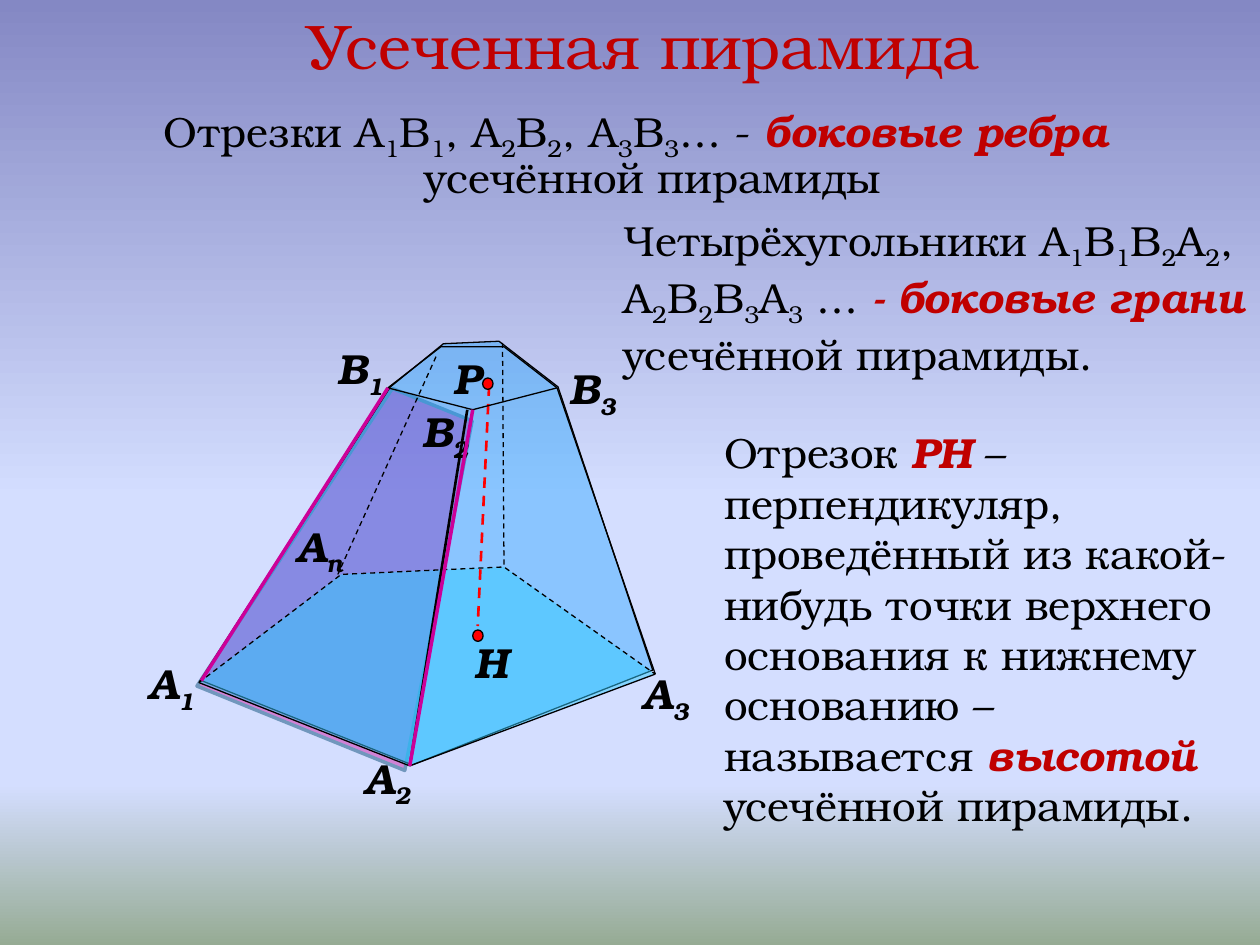
"""Build a slide on the truncated pyramid: its edges, faces and height."""
from lxml import etree
from pptx import Presentation
from pptx.dml.color import RGBColor
from pptx.enum.dml import MSO_LINE
from pptx.enum.shapes import MSO_CONNECTOR, MSO_SHAPE
from pptx.enum.text import PP_ALIGN
from pptx.oxml.ns import qn
from pptx.util import Cm, Pt

DASH = MSO_LINE.DASH
STRAIGHT = MSO_CONNECTOR.STRAIGHT
TRAPEZOID = MSO_SHAPE.TRAPEZOID
OVAL = MSO_SHAPE.OVAL
CENTER = PP_ALIGN.CENTER
FONT = "TeX Gyre Bonum"
COLORS = {
    "ink": "000000", "accent": "C00000", "edge": "CC0099", "face_line": "7197BD",
    "body": "0099FF", "base": "33CCFF", "height": "FF0000",
}
SKY = [(0, "8488C4"), (53, "D4DEFF"), (83, "D4DEFF"), (100, "96AB94")]

A1, A2, A3 = (4.01, 13.76), (8.26, 15.44), (13.21, 13.59)
A_N, A_BACK = (6.88, 11.58), (10.16, 11.43)
B1, B2, B3 = (7.82, 7.82), (9.53, 8.26), (11.23, 7.82)
B_N, B_BACK = (8.89, 6.99), (10.16, 6.99)
BODY = [(4.06, 13.72), (8.31, 15.42), (13.16, 13.51), (11.25, 7.8),
        (10.06, 6.88), (8.94, 6.93), (7.87, 7.8)]
VERTEX_LABELS = [
    ("А_1", 2.74, 13.13), ("А_2", 7.09, 15.04), ("А_n", 5.72, 10.36),
    ("А_3", 12.7, 13.34), ("В_1", 6.55, 6.78), ("В_2", 8.26, 8.05),
    ("В_3", 11.23, 7.19), ("Р", 8.89, 6.99), ("Н", 9.32, 12.7),
]


def rgb(name):
    """Return the palette colour with this name."""
    return RGBColor.from_string(COLORS[name])


def paint_sky(slide):
    """Fill the background with the vertical gradient."""
    fill = slide.background.fill
    fill.gradient()
    fill.gradient_angle = 270
    stops = slide.background._cSld.find(".//" + qn("a:gsLst"))
    for old_stop in list(stops):
        stops.remove(old_stop)
    for percent, color in SKY:
        stop = etree.SubElement(stops, qn("a:gs"), pos=str(percent * 1000))
        etree.SubElement(stop, qn("a:srgbClr"), val=color)


def style_shape(shape, fill=None, alpha=100, line=None, width=0.75):
    """Set the fill, its opacity in percent, and the outline."""
    shape.shadow.inherit = False
    if fill:
        shape.fill.solid()
        shape.fill.fore_color.rgb = rgb(fill)
        if alpha < 100:
            color = shape.fill._xPr.find(".//" + qn("a:srgbClr"))
            etree.SubElement(color, qn("a:alpha"), val=str(alpha * 1000))
    else:
        shape.fill.background()
    if line:
        shape.line.color.rgb = rgb(line)
        shape.line.width = Pt(width)
    else:
        shape.line.fill.background()


def add_outline(slide, points, close=False, dash=None, **style):
    """Draw a polygon or a broken line through the points."""
    corners = [(Cm(x), Cm(y)) for x, y in points]
    builder = slide.shapes.build_freeform(*corners[0])
    builder.add_line_segments(corners[1:], close=close)
    outline = builder.convert_to_shape()
    style_shape(outline, **style)
    if dash:
        outline.line.dash_style = dash


def add_edge(slide, start, end, color="ink", width=0.75, dash=None):
    """Draw one straight edge."""
    edge = slide.shapes.add_connector(STRAIGHT, *map(Cm, start + end))
    edge.line.color.rgb = rgb(color)
    edge.line.width = Pt(width)
    if dash:
        edge.line.dash_style = dash
    etree.SubElement(edge._element.spPr, qn("a:effectLst"))


def add_preset(slide, preset, box, **style):
    """Add a styled preset shape and return it."""
    shape = slide.shapes.add_shape(preset, *map(Cm, box))
    style_shape(shape, **style)
    return shape


def add_run(paragraph, text, color, strong, subscript=False):
    """Append a run in its colour, weight and baseline."""
    if not text:
        return
    run = paragraph.add_run()
    run.text = text
    run.font.color.rgb = rgb(color)
    run.font.bold = run.font.italic = strong
    if subscript:
        run.font._element.set("baseline", "-25000")


def add_text(slide, box, text, size=24, wrap=True, color="ink", strong=False):
    """Add text where *...* is a key term and _ lowers the next letter."""
    frame = slide.shapes.add_textbox(*map(Cm, box)).text_frame
    frame.word_wrap = wrap
    paragraph = frame.paragraphs[0]
    paragraph.font.name = FONT
    paragraph.font.size = Pt(size)
    for index, part in enumerate(text.split("*")):
        is_term = index % 2 == 1
        look = ("accent", True) if is_term else (color, strong)
        plain, *lowered = part.split("_")
        add_run(paragraph, plain, *look)
        for piece in lowered:
            add_run(paragraph, piece[0], *look, subscript=True)
            add_run(paragraph, piece[1:], *look)
    return paragraph


def draw_pyramid(slide):
    """Draw the faces, the visible and hidden edges, and the height."""
    side_face = add_preset(slide, TRAPEZOID, (5.13, 7.9, 4.52, 7.04),
                           fill="edge", alpha=41, line="face_line", width=2)
    side_face.rotation = 22.1
    side_face.adjustments[0] = 0.308
    add_outline(slide, BODY, close=True, fill="body", alpha=35, line="ink")
    add_outline(slide, [A1, A_N, A_BACK, A3, A2, A1], fill="base", alpha=50)
    add_edge(slide, B1, A1)
    add_edge(slide, B3, A3)
    add_edge(slide, (10.13, 6.91), A_BACK, dash=DASH)
    add_edge(slide, (8.79, 7.19), (6.81, 11.58), dash=DASH)
    add_outline(slide, [A1, A_N, A_BACK, A3], line="ink", dash=DASH)
    add_edge(slide, (9.42, 8.26), A2, width=1.5)
    add_outline(slide, [A1, A2, A3], line="ink")
    add_edge(slide, (9.86, 7.77), (9.63, 12.62), "height", 1.5, DASH)
    for left, top in [(9.73, 7.62), (9.53, 12.7)]:
        add_preset(slide, OVAL, (left, top, 0.21, 0.23), fill="height", line="ink")
    add_outline(slide, [B1, B2, B3], line="ink")
    add_outline(slide, [B3, B_BACK, B_N, B1], line="ink")
    for label, left, top in VERTEX_LABELS:
        width = 1.52 if "_" in label else 1.13
        add_text(slide, (left, top, width, 1.28), label, wrap=False, strong=True)


def write_definitions(slide):
    """Write the title and the three definitions."""
    add_text(slide, (5.92, 0, 14.22, 1.8), "Усеченная пирамида",
             size=36, wrap=False, color="accent")
    edges = add_text(slide, (1.37, 2.01, 22.63, 2.11),
                     " Отрезки А_1В_1, А_2В_2, А_3В_3… - *боковые ребра *усечённой пирамиды")
    edges.alignment = CENTER
    edges.line_spacing = 0.9
    edges.space_before = Pt(4.8)
    properties = edges._p.get_or_add_pPr()
    properties.set("marL", str(Cm(0.95)))
    properties.set("indent", str(-Cm(0.95)))
    add_text(slide, (14.35, 8.48, 11.05, 8.46),
             "Отрезок *РН* – перпендикуляр, проведённый из какой-нибудь точки верхнего "
             "основания к нижнему основанию – называется *высотой *усечённой пирамиды.")
    add_text(slide, (12.32, 4.19, 13.08, 3.33),
             "Четырёхугольники А_1В_1В_2А_2, А_2В_2В_3А_3 … "
             "*- боковые грани *усечённой пирамиды.")


def main():
    """Build and save the slide."""
    presentation = Presentation()
    presentation.slide_width, presentation.slide_height = Cm(25.4), Cm(19.05)
    slide = presentation.slides.add_slide(presentation.slide_layouts[6])
    paint_sky(slide)
    draw_pyramid(slide)
    write_definitions(slide)
    add_edge(slide, B1, BODY[0], "edge", 2)
    add_edge(slide, B2, A2, "edge", 2)
    presentation.save("out.pptx")


if __name__ == "__main__":
    main()
